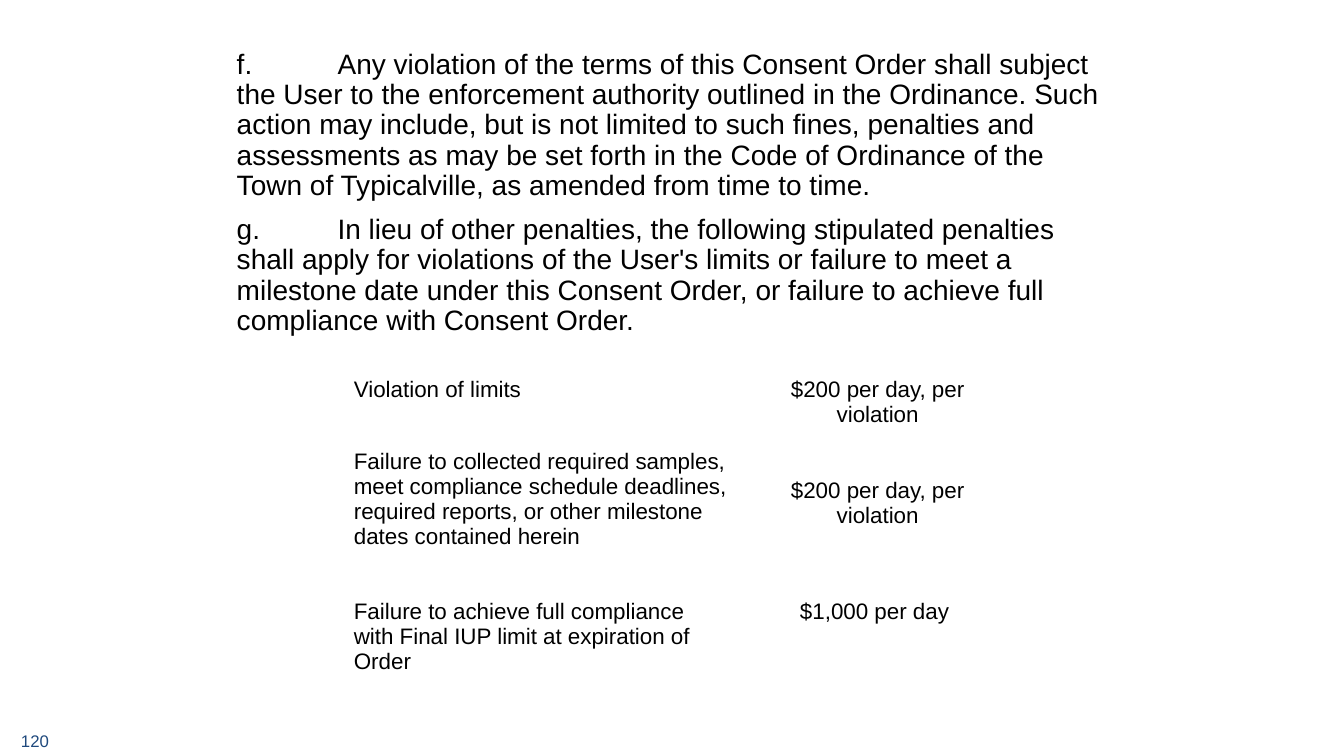
from dataclasses import dataclass

from lxml import etree
from pptx import Presentation
from pptx import util as u
from pptx.dml.color import RGBColor
from pptx.enum import text
from pptx.oxml import ns


@dataclass(frozen=True)
class Theme:
    font: str = "Arial"
    ink: str = "000000"
    number_color: str = "1F497D"
    body_size: int = 20
    table_size: int = 16
    number_size: int = 12


theme = Theme()


def style(para, size, color=theme.ink):
    for span in para.runs:
        span.font.name = theme.font
        span.font.size = u.Pt(size)
        span.font.bold = False
        span.font.color.rgb = RGBColor.from_string(color)


def add_box(slide, left, top, width, height):
    box = slide.shapes.add_textbox(*map(u.Inches, (left, top, width, height)))
    box.text_frame.word_wrap = True
    return box


deck = Presentation()
deck.slide_width = u.Inches(13.33)
deck.slide_height = u.Inches(7.5)
page = deck.slides.add_slide(deck.slide_layouts[6])

# Order clauses, with the wording starting at a tab stop
clauses = [
    "f.\tAny violation of the terms of this Consent Order shall subject the User to the "
    "enforcement authority outlined in the Ordinance. Such action may include, but is not "
    "limited to such fines, penalties and assessments as may be set forth in the Code of "
    "Ordinance of the Town of Typicalville, as amended from time to time.",
    "g.\tIn lieu of other penalties, the following stipulated penalties shall apply for "
    "violations of the User's limits or failure to meet a milestone date under this Consent "
    "Order, or failure to achieve full compliance with Consent Order.",
]
clause_frame = add_box(page, 2.25, 0.45, 8.83, 2.97).text_frame
for index, clause in enumerate(clauses):
    para = clause_frame.add_paragraph() if index else clause_frame.paragraphs[0]
    para.text = clause
    tabs = etree.SubElement(para._p.get_or_add_pPr(), ns.qn("a:tabLst"))
    etree.SubElement(tabs, ns.qn("a:tab"), pos=str(u.Inches(1)), algn="l")
    para.line_spacing = 0.9
    if index:
        para.space_before = u.Pt(10)
    style(para, theme.body_size)

# Penalty table: each cell is (wording, top margin)
HIGH, LOW = 0.05, 0.34
penalties = [
    (("Violation of limits", LOW), ("$200 per day, per violation", LOW)),
    (("Failure to collected required samples, meet compliance schedule deadlines, "
      "required reports, or other milestone dates contained herein", HIGH),
     ("$200 per day, per violation", LOW)),
    (("Failure to achieve full compliance with Final IUP limit at expiration of Order", HIGH),
     ("$1,000 per day ", HIGH)),
]
column_widths = [3.92, 2.75]
row_heights = [1.01, 1.49, 0.9]
alignments = [text.PP_ALIGN.LEFT, text.PP_ALIGN.CENTER]

table = page.shapes.add_table(
    len(row_heights), len(column_widths), u.Inches(3.41), u.Inches(3.4),
    u.Inches(sum(column_widths)), u.Inches(sum(row_heights))).table
table.first_row = False
table.horz_banding = False
for column, width in zip(table.columns, column_widths):
    column.width = u.Inches(width)
for row, height, entries in zip(table.rows, row_heights, penalties):
    row.height = u.Inches(height)
    for cell, (wording, margin), alignment in zip(row.cells, entries, alignments):
        cell.fill.background()
        cell.margin_top = u.Inches(margin)
        cell.text_frame.text = wording
        para = cell.text_frame.paragraphs[0]
        para.alignment = alignment
        style(para, theme.table_size)

# Page number
number_frame = add_box(page, 0.11, 7.27, 3, 0.15).text_frame
number_frame.vertical_anchor = text.MSO_ANCHOR.MIDDLE
number_frame.text = "120"
style(number_frame.paragraphs[0], theme.number_size, theme.number_color)

deck.save("out.pptx")
